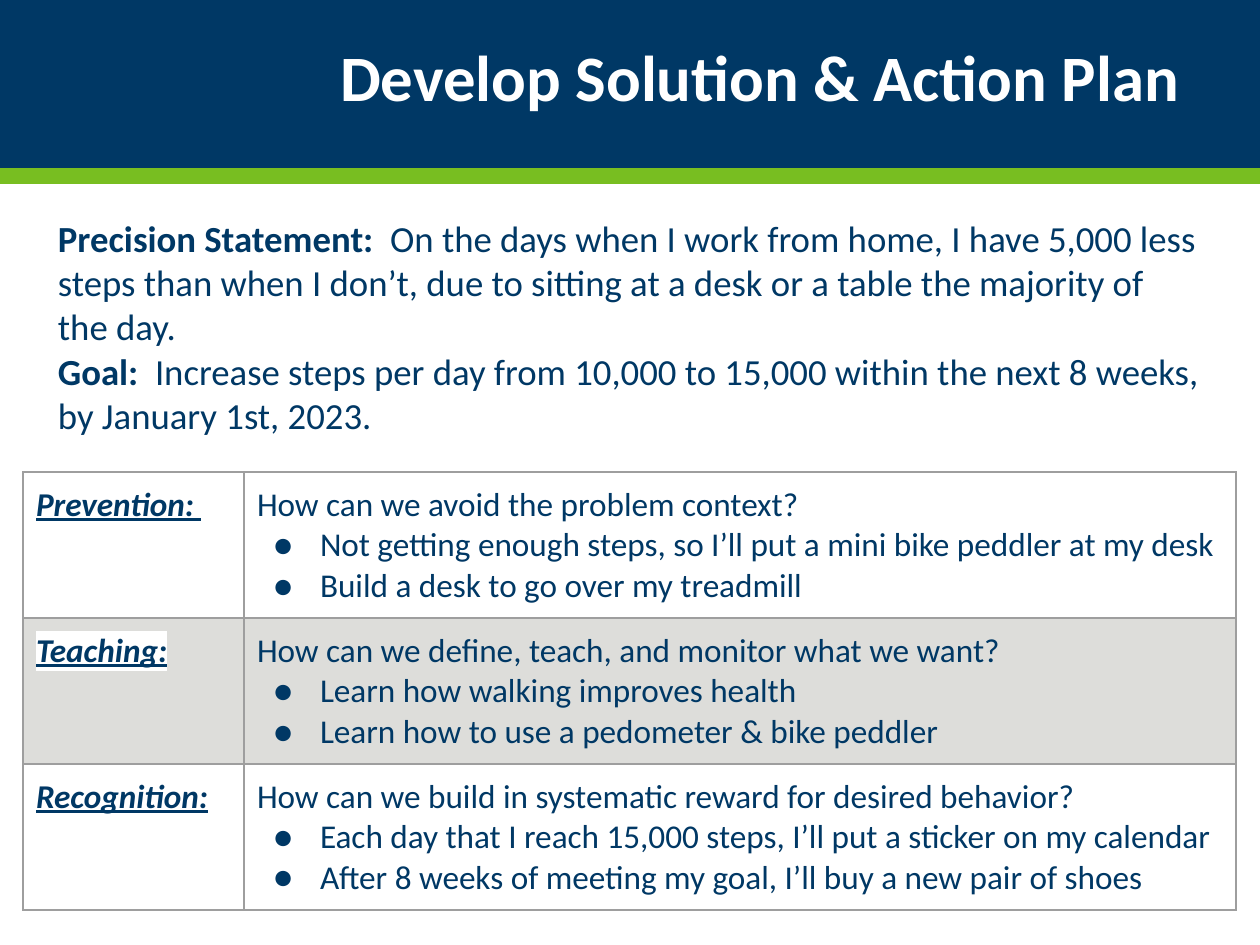
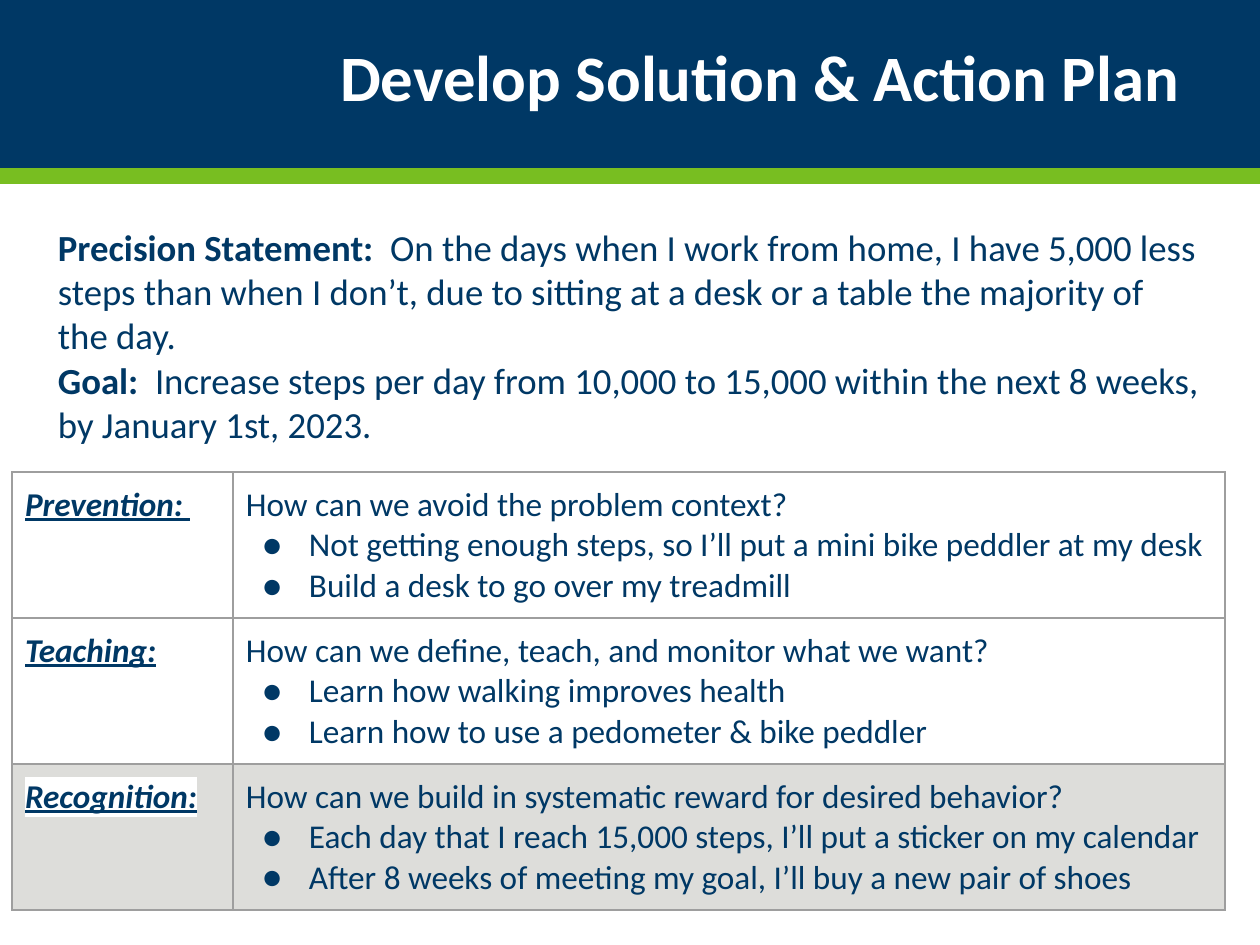
import pptx
import pptx.dml.color
import pptx.enum.shapes
import pptx.enum.text
import pptx.oxml
import pptx.oxml.ns
import pptx.util

PX = 914400 / 126
NAVY = pptx.dml.color.RGBColor(0x00, 0x38, 0x65)
GREEN = pptx.dml.color.RGBColor(0x78, 0xBE, 0x21)
WHITE = pptx.dml.color.RGBColor(0xFF, 0xFF, 0xFF)
GRAY = pptx.dml.color.RGBColor(0xDD, 0xDD, 0xDA)
BORDER = pptx.dml.color.RGBColor(0x9E, 0x9E, 0x9E)
FONT = "Calibri"
PAGE_SIZE = (1260, 945)
BAND_BOX = (0, 0, 1260, 184)
STRIPE_HEIGHT = 16
ROW_HEIGHT = 146
COLUMN_WIDTHS = (221, 992)
CELL_INSET = 13
CELL_SIZE = 19

TITLE = "Develop Solution & Action Plan"
STATEMENTS = [
    ("Precision Statement:",
     "  On the days when I work from home, I have 5,000 less steps than when I don’t, "
     "due to sitting at a desk or a table the majority of the day."),
    ("Goal:  ",
     "Increase steps per day from 10,000 to 15,000 within the next 8 weeks, by January 1st, 2023."),
]
ACTIONS = [
    ("Prevention: ", "How can we avoid the problem context?",
     ["Not getting enough steps, so I’ll put a mini bike peddler at my desk",
      "Build a desk to go over my treadmill"]),
    ("Teaching:", "How can we define, teach, and monitor what we want?",
     ["Learn how walking improves health",
      "Learn how to use a pedometer & bike peddler"]),
    ("Recognition:", "How can we build in systematic reward for desired behavior?",
     ["Each day that I reach 15,000 steps, I’ll put a sticker on my calendar",
      "After 8 weeks of meeting my goal, I’ll buy a new pair of shoes"]),
]


def px(length):
    return pptx.util.Emu(round(length * PX))


def add_xml(parent, markup):
    namespaces = pptx.oxml.ns.nsdecls("a")
    element = pptx.oxml.parse_xml(markup.replace(">", f" {namespaces}>", 1))
    parent.append(element)
    return element


def write(para, text, size=CELL_SIZE, color=NAVY, bold=False, italic=False,
          underline=False, highlight=None):
    span = para.add_run()
    span.text = text
    font = span.font
    font.size, font.name = pptx.util.Pt(size), FONT
    font.bold, font.italic, font.underline = bold, italic, underline
    font.color.rgb = color
    if highlight is not None:
        properties = span._r.get_or_add_rPr()
        mark = add_xml(properties, f'<a:highlight><a:srgbClr val="{highlight}"/></a:highlight>')
        properties.find(pptx.oxml.ns.qn("a:solidFill")).addnext(mark)


def add_bullet(para):
    properties = para._p.get_or_add_pPr()
    properties.set("marL", str(px(63)))
    properties.set("indent", str(px(-47)))
    add_xml(properties, f'<a:buClr><a:srgbClr val="{NAVY}"/></a:buClr>')
    add_xml(properties, f'<a:buFont typeface="{FONT}"></a:buFont>')
    add_xml(properties, '<a:buChar char="●"></a:buChar>')


def add_text_box(page, box, inset_x, inset_y):
    frame = page.shapes.add_textbox(*map(px, box)).text_frame
    frame.word_wrap = True
    frame.margin_left = frame.margin_right = px(inset_x)
    frame.margin_top = frame.margin_bottom = px(inset_y)
    return frame


def add_band(page, box, color):
    band = page.shapes.add_shape(pptx.enum.shapes.MSO_SHAPE.RECTANGLE, *map(px, box))
    band.shadow.inherit = False
    band.fill.solid()
    band.fill.fore_color.rgb = color
    band.line.fill.background()


def add_header(page, box):
    left, top, width, height = box
    band_height = height - STRIPE_HEIGHT
    add_band(page, (left, top, width, band_height), NAVY)
    add_band(page, (left, top + band_height, width, STRIPE_HEIGHT), GREEN)
    frame = add_text_box(page, (left + 50, top + 18, width - 122, 126), 9, 5)
    frame.vertical_anchor = pptx.enum.text.MSO_ANCHOR.MIDDLE
    para = frame.paragraphs[0]
    para.alignment = pptx.enum.text.PP_ALIGN.RIGHT
    para.line_spacing = 0.9
    write(para, TITLE, size=37, color=WHITE, bold=True)


def add_statements(page, box):
    frame = add_text_box(page, box, CELL_INSET, CELL_INSET)
    for index, (label, statement) in enumerate(STATEMENTS):
        para = frame.add_paragraph() if index else frame.paragraphs[0]
        write(para, label, size=21, bold=True)
        write(para, statement, size=21)


def style_cell(cell, shaded):
    cell.margin_left = cell.margin_right = px(CELL_INSET)
    cell.margin_top = cell.margin_bottom = px(CELL_INSET)
    properties = cell._tc.get_or_add_tcPr()
    for side in "LRTB":
        add_xml(properties, f'<a:ln{side} w="{pptx.util.Pt(0.75)}"><a:solidFill>'
                            f'<a:srgbClr val="{BORDER}"/></a:solidFill></a:ln{side}>')
    if shaded:
        cell.fill.solid()
        cell.fill.fore_color.rgb = GRAY
    else:
        cell.fill.background()


def add_action_table(page, box, focus):
    table = page.shapes.add_table(len(ACTIONS), len(COLUMN_WIDTHS), *map(px, box)).table
    table.first_row = table.horz_banding = False
    for column, width in zip(table.columns, COLUMN_WIDTHS):
        column.width = px(width)
    for index, (label, question, answers) in enumerate(ACTIONS):
        table.rows[index].height = px(ROW_HEIGHT)
        label_cell, plan_cell = table.rows[index].cells
        for cell in (label_cell, plan_cell):
            style_cell(cell, index == focus)
        write(label_cell.text_frame.paragraphs[0], label, bold=True, italic=True,
              underline=True, highlight=WHITE)
        frame = plan_cell.text_frame
        write(frame.paragraphs[0], question)
        for answer in answers:
            para = frame.add_paragraph()
            add_bullet(para)
            write(para, answer)


def add_plan_page(deck, statement_top, table_left, focus):
    page = deck.slides.add_slide(deck.slide_layouts[6])
    add_header(page, BAND_BOX)
    table_box = (table_left, 472, sum(COLUMN_WIDTHS), ROW_HEIGHT * len(ACTIONS))
    add_action_table(page, table_box, focus)
    add_statements(page, (45, statement_top, 1169, 72))


def main():
    deck = pptx.Presentation()
    deck.slide_width, deck.slide_height = map(px, PAGE_SIZE)
    add_plan_page(deck, statement_top=203, table_left=23, focus=1)
    add_plan_page(deck, statement_top=212, table_left=12, focus=2)
    deck.save("out.pptx")


if __name__ == "__main__":
    main()
